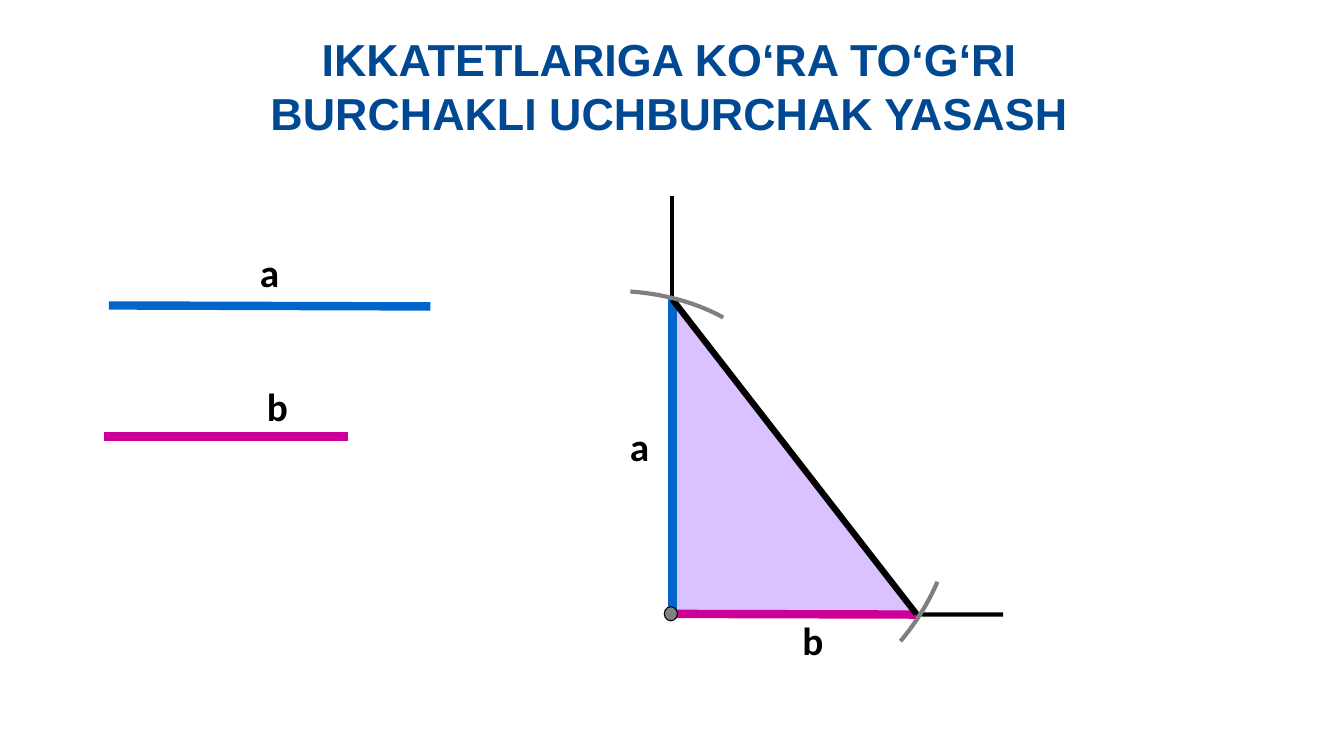
from dataclasses import dataclass
from lxml.etree import SubElement
from pptx import Presentation
from pptx.dml.color import RGBColor as RGB
from pptx.enum.shapes import MSO_CONNECTOR as LINE, MSO_SHAPE as SHAPE
from pptx.enum.text import MSO_AUTO_SIZE as FIT, PP_ALIGN as ALIGN
from pptx.oxml.ns import qn
from pptx.util import Pt


@dataclass(frozen=True)
class Theme:
    title: RGB = RGB(0x00, 0x49, 0x92)
    ink: RGB = RGB(0, 0, 0)
    leg_a: RGB = RGB(0x00, 0x66, 0xCC)
    leg_b: RGB = RGB(0xCC, 0x00, 0x99)
    area: RGB = RGB(0xDA, 0xC1, 0xFF)
    gray: RGB = RGB(0x80, 0x80, 0x80)
    head: str = "Arial"
    body: str = "Calibri"
    head_size: int = 32
    body_size: int = 28
    thick: float = 6
    side: float = 4.5
    thin: float = 3
    rim: float = 0.75


T = Theme()


def add_line(slide, x1, y1, x2, y2, color, width):
    line = slide.shapes.add_connector(LINE.STRAIGHT, Pt(x1), Pt(y1), Pt(x2), Pt(y2))
    line.line.color.rgb = color
    line.line.width = Pt(width)
    SubElement(line._element.spPr, qn("a:effectLst"))


def add_shape(slide, kind, box, fill=None, color=None, width=0, turn=0):
    shape = slide.shapes.add_shape(kind, *map(Pt, box))
    shape.shadow.inherit = False
    shape.rotation = turn
    if fill is None:
        shape.fill.background()
    else:
        shape.fill.solid()
        shape.fill.fore_color.rgb = fill
    if color is None:
        shape.line.fill.background()
    else:
        shape.line.color.rgb = color
        shape.line.width = Pt(width)
    return shape


def add_arc(slide, x, y, turn, end, flip=False):
    arc = add_shape(slide, SHAPE.ARC, (x, y, 213.8, 123.8), None, T.gray, T.thin, turn)
    # Arc angles are stored in units of 0.6 degrees
    arc.adjustments[0] = 270 * 0.6
    arc.adjustments[1] = end * 0.6
    if flip:
        arc._element.spPr.xfrm.set("flipV", "1")


def add_text(slide, box, words, font, size, color, align=ALIGN.LEFT, wrap=False):
    frame = slide.shapes.add_textbox(*map(Pt, box)).text_frame
    frame.word_wrap = wrap
    frame.auto_size = FIT.SHAPE_TO_FIT_TEXT
    para = frame.paragraphs[0]
    para.alignment = align
    run = para.add_run()
    run.text = words
    run.font.name = font
    run.font.size = Pt(size)
    run.font.bold = True
    run.font.color.rgb = color


def add_label(slide, x, y, name):
    add_text(slide, (x, y, 29, 41), name, T.body, T.body_size, T.ink)


def draw_title(slide, box):
    add_text(slide, box, "IKKATETLARIGA KO‘RA TO‘G‘RI BURCHAKLI UCHBURCHAK YASASH",
             T.head, T.head_size, T.title, ALIGN.CENTER, True)


def draw_given(slide, box):
    # The two given legs, each with its name above
    x, y, wide, high = box
    add_line(slide, x + 3.6, y, x + wide, y + 0.7, T.leg_a, T.thick)
    add_line(slide, x, y + high, x + 174.2, y + high, T.leg_b, T.thick)
    add_label(slide, x + 104.4, y - 44.6, "a")
    add_label(slide, x + 109.4, y + high - 42.5, "b")


def draw_build(slide, box):
    # The box is the triangle; its right angle is at bottom left
    x, y, wide, high = box
    right, base = x + wide, y + high
    add_shape(slide, SHAPE.RIGHT_TRIANGLE, (x, y + 5.4, wide, high - 5.2), T.area, turn=1)

    # Rays, legs and long side
    add_line(slide, x, base, x, y - 73.6, T.ink, T.thin)
    add_line(slide, x, base, right + 62, base + 0.5, T.ink, T.thin)
    add_line(slide, x, y, x, base, T.leg_a, T.thick)
    add_line(slide, x, base, right, base + 0.5, T.leg_b, T.thick)
    add_line(slide, right, base, x, y, T.ink, T.side)

    # Compass marks and corner point
    add_arc(slide, x - 141.2, y - 5.8, 4, 324.58)
    add_arc(slide, x + 8.6, base - 82.1, 310, 312.09, True)
    add_shape(slide, SHAPE.OVAL, (x - 5.8, base - 5.1, 9.4, 10.1), T.gray, T.ink, T.rim)

    add_label(slide, x - 37.4, y + 84.2, "a")
    add_label(slide, x + 85.7, base - 1.5, "b")


def main():
    deck = Presentation()
    deck.slide_width, deck.slide_height = Pt(960), Pt(540)
    slide = deck.slides.add_slide(deck.slide_layouts[6])
    draw_title(slide, (123.8, 19.4, 708.5, 85))
    draw_given(slide, (74.2, 218.2, 233.2, 93.6))
    draw_build(slide, (480.3, 213.9, 174.2, 224.6))
    deck.save("out.pptx")


if __name__ == "__main__":
    main()
